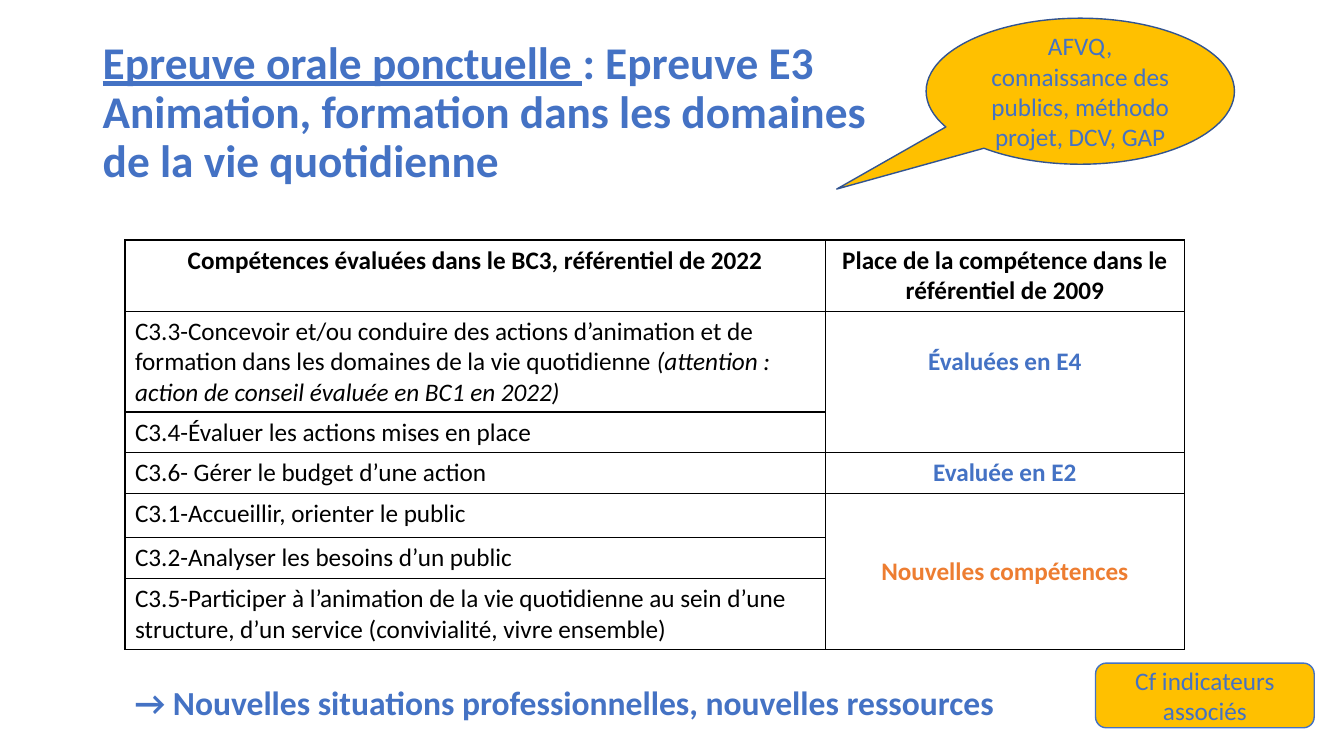
"""Build the slide on the E3 oral exam and its assessed skills."""
from lxml import etree
from pptx import Presentation
from pptx.dml.color import RGBColor
from pptx.enum.shapes import MSO_SHAPE
from pptx.enum.text import MSO_ANCHOR, PP_ALIGN
from pptx.oxml.ns import qn
from pptx.util import Cm, Pt

CENTER, LEFT = PP_ALIGN.CENTER, PP_ALIGN.LEFT
TOP, MIDDLE = MSO_ANCHOR.TOP, MSO_ANCHOR.MIDDLE
CALLOUT = MSO_SHAPE.OVAL_CALLOUT
ROUNDED = MSO_SHAPE.ROUNDED_RECTANGLE

BLUE = RGBColor(0x44, 0x72, 0xC4)
DARK_BLUE = RGBColor(0x32, 0x54, 0x91)
GOLD = RGBColor(0xFF, 0xC0, 0x00)
ORANGE = RGBColor(0xED, 0x7D, 0x31)
BLACK = RGBColor(0, 0, 0)
FONT = "Calibri"

COL_WIDTHS = (17.65, 9.05)
ROW_HEIGHTS = (1.79, 2.54, 1.03, 1.03, 1.11, 1.03, 1.79)
HEADERS = (
    "Compétences évaluées dans le BC3, référentiel de 2022",
    "Place de la compétence dans le référentiel de 2009",
)
SKILLS = (
    "C3.3-Concevoir et/ou conduire des actions d’animation et de formation "
    "dans les domaines de la vie quotidienne ",
    "C3.4-Évaluer les actions mises en place",
    "C3.6- Gérer le budget d’une action",
    "C3.1-Accueillir, orienter le public",
    "C3.2-Analyser les besoins d’un public",
    "C3.5-Participer à l’animation de la vie quotidienne au sein d’une "
    "structure, d’un service (convivialité, vivre ensemble)",
)
SKILL_NOTE = "(attention : action de conseil évaluée en BC1 en 2022)"
PLACES = (
    (1, 2, "Évaluées en E4", BLUE, TOP),
    (3, 3, "Evaluée en E2", BLUE, MIDDLE),
    (4, 6, "Nouvelles compétences", ORANGE, MIDDLE),
)


def add_text(p, text, size=18, color=BLACK, bold=False, italic=False,
             underline=False, align=LEFT):
    """Append formatted text to a paragraph, breaking lines at newlines."""
    p.alignment = align
    for i, line in enumerate(text.split("\n")):
        if i:
            p.add_line_break()
        r = p.add_run()
        r.text = line
        font = r.font
        font.name, font.size = FONT, Pt(size)
        font.bold, font.italic, font.underline = bold, italic, underline
        font.color.rgb = color


def add_box(s, left, top, width, height, anchor=TOP):
    """Add a wrapping text box and return its first paragraph."""
    sp = s.shapes.add_textbox(Cm(left), Cm(top), Cm(width), Cm(height))
    tf = sp.text_frame
    tf.word_wrap = True
    tf.vertical_anchor = anchor
    return tf.paragraphs[0]


def add_bubble(s, kind, left, top, width, height, text, line):
    """Add a gold shape with centred blue text."""
    sp = s.shapes.add_shape(kind, Cm(left), Cm(top), Cm(width), Cm(height))
    sp.shadow.inherit = False
    sp.fill.solid()
    sp.fill.fore_color.rgb = GOLD
    sp.line.color.rgb = line
    sp.line.width = Pt(1)
    tf = sp.text_frame
    tf.word_wrap = True
    tf.vertical_anchor = MIDDLE
    add_text(tf.paragraphs[0], text, color=BLUE, align=CENTER)
    return sp


def set_borders(cell):
    """Draw a thin black line on every side of a cell."""
    tc_pr = cell._tc.get_or_add_tcPr()
    for side in ("a:lnL", "a:lnR", "a:lnT", "a:lnB"):
        ln = etree.SubElement(tc_pr, qn(side), w=str(Pt(1)))
        fill = etree.SubElement(ln, qn("a:solidFill"))
        etree.SubElement(fill, qn("a:srgbClr"), val=str(BLACK))


def add_skills_table(s, left, top):
    """Add the table of skills and their place in the former framework."""
    table = s.shapes.add_table(
        len(ROW_HEIGHTS), len(COL_WIDTHS), Cm(left), Cm(top),
        Cm(sum(COL_WIDTHS)), Cm(sum(ROW_HEIGHTS))).table
    table.first_row = table.horz_banding = False
    for column, width in zip(table.columns, COL_WIDTHS):
        column.width = Cm(width)
    for row, height in zip(table.rows, ROW_HEIGHTS):
        row.height = Cm(height)
    for cell in table.iter_cells():
        set_borders(cell)
        cell.fill.background()

    for col, header in enumerate(HEADERS):
        p = table.cell(0, col).text_frame.paragraphs[0]
        add_text(p, header, bold=True, align=CENTER)
    for row, skill in enumerate(SKILLS, 1):
        add_text(table.cell(row, 0).text_frame.paragraphs[0], skill)
    add_text(table.cell(1, 0).text_frame.paragraphs[0], SKILL_NOTE, italic=True)

    for first, last, place, color, anchor in PLACES:
        cell = table.cell(first, 1)
        if last > first:
            cell.merge(table.cell(last, 1))
        cell.vertical_anchor = anchor
        if anchor == TOP:
            cell.margin_top = Cm(0.9)
        add_text(cell.text_frame.paragraphs[0], place, color=color, bold=True,
                 align=CENTER)


def main():
    """Compose the slide and save it."""
    prs = Presentation()
    prs.slide_width, prs.slide_height = Cm(33.87), Cm(19.05)
    s = prs.slides.add_slide(prs.slide_layouts[6])

    p = add_box(s, 2.34, 1.02, 29.21, 3.68, MIDDLE)
    p.line_spacing = 0.9
    title = {"size": 32.4, "color": BLUE, "bold": True}
    add_text(p, "Epreuve orale ponctuelle ", underline=True, **title)
    add_text(p, ": Epreuve E3\nAnimation, formation dans les domaines \n"
             "de la vie quotidienne", **title)

    p = add_box(s, 3.15, 17.07, 26.7, 1.27)
    add_text(p, "→ Nouvelles situations professionnelles, nouvelles ressources",
             size=24, color=BLUE, bold=True)

    callout = add_bubble(
        s, CALLOUT, 23.34, 0.46, 7.77, 3.68,
        "AFVQ, connaissance des publics, méthodo projet, DCV, GAP", DARK_BLUE)
    callout.adjustments[0] = -0.79
    callout.adjustments[1] = 0.67
    add_bubble(s, ROUNDED, 27.61, 16.71, 5.51, 1.63,
               "Cf indicateurs associés", BLUE)
    add_skills_table(s, 3.15, 6.05)
    prs.save("out.pptx")


if __name__ == "__main__":
    main()
